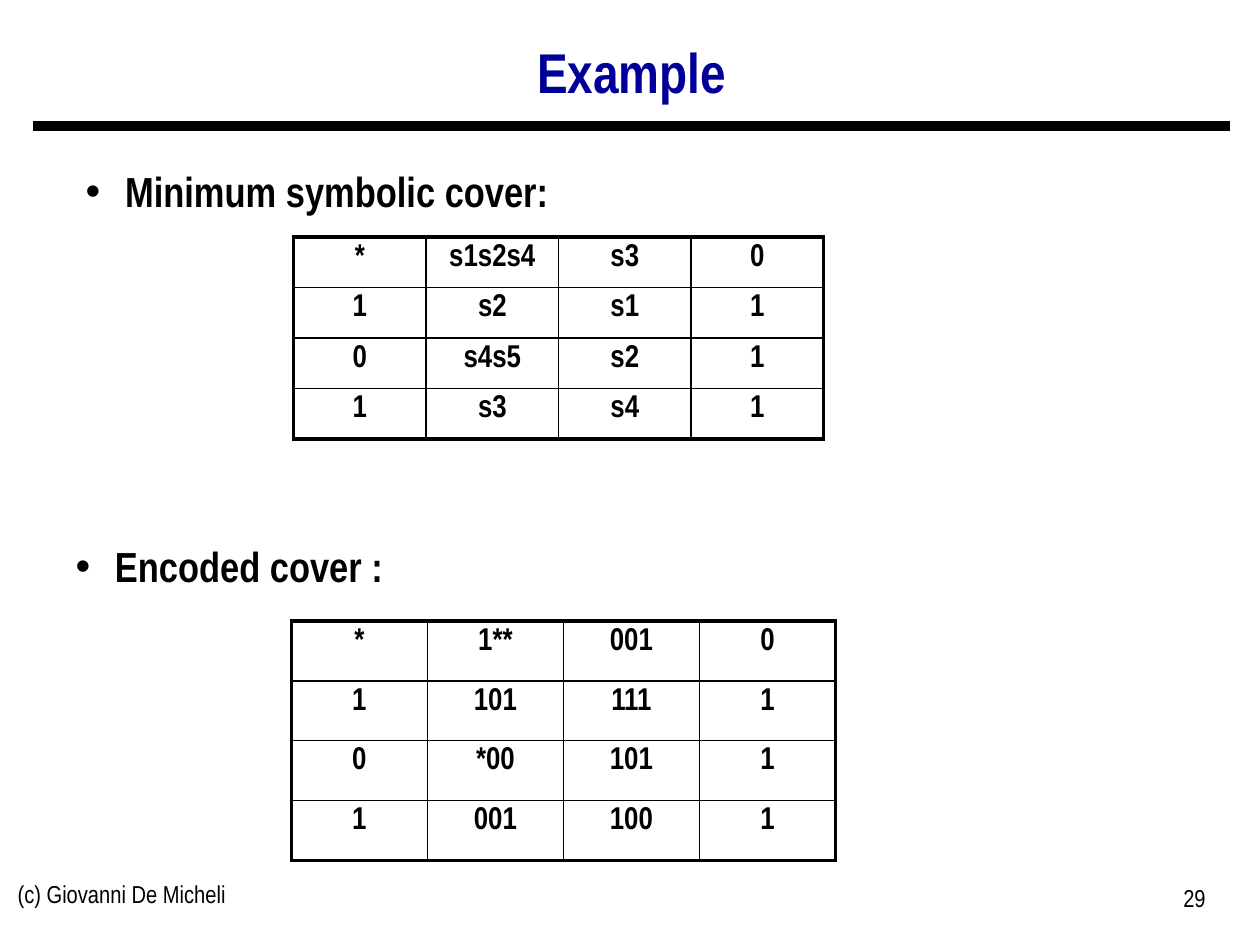
from lxml import etree
from pptx import Presentation
from pptx.dml.color import RGBColor
from pptx.enum.shapes import MSO_CONNECTOR
from pptx.enum.text import MSO_ANCHOR, MSO_AUTO_SIZE, PP_ALIGN
from pptx.oxml.ns import qn
from pptx.util import Pt

FONT = "Arial Narrow"
COLORS = {"text": "000000", "title": "000099", "line": "000000"}
LEFT, CENTER, RIGHT = PP_ALIGN.LEFT, PP_ALIGN.CENTER, PP_ALIGN.RIGHT
TOP, MIDDLE = MSO_ANCHOR.TOP, MSO_ANCHOR.MIDDLE
NO_AUTO_SIZE = MSO_AUTO_SIZE.NONE
STRAIGHT = MSO_CONNECTOR.STRAIGHT
OUTER_BORDER, INNER_BORDER = 2.25, 1

SYMBOLIC_COVER = [
    ["*", "s1s2s4", "s3", "0"],
    ["1", "s2", "s1", "1"],
    ["0", "s4s5", "s2", "1"],
    ["1", "s3", "s4", "1"],
]
ENCODED_COVER = [
    ["*", "1**", "001", "0"],
    ["1", "101", "111", "1"],
    ["0", "*00", "101", "1"],
    ["1", "001", "100", "1"],
]


def write(text_frame, text, size, alignment=LEFT, bold=False, color="text"):
    paragraph = text_frame.paragraphs[0]
    paragraph.alignment = alignment
    run = paragraph.add_run()
    run.text = text
    run.font.name = FONT
    run.font.size = Pt(size)
    run.font.bold = bold
    run.font.color.rgb = RGBColor.from_string(COLORS[color])
    return paragraph


def place(shape, left, top, width, height):
    shape.left, shape.top = Pt(left), Pt(top)
    shape.width, shape.height = Pt(width), Pt(height)


def add_header(slide, left, top, width, height):
    """Fill the title and draw the rule just below it."""
    title = slide.shapes.title
    place(title, left, top, width, height)
    title.text_frame.auto_size = NO_AUTO_SIZE
    title.text_frame.vertical_anchor = MIDDLE
    paragraph = write(title.text_frame, "Example", 32, CENTER, True, "title")
    paragraph.line_spacing = 0.9

    rule_y = Pt(top + height + 2)
    rule = slide.shapes.add_connector(
        STRAIGHT, Pt(left), rule_y, Pt(left + width), rule_y)
    rule.line.color.rgb = RGBColor.from_string(COLORS["line"])
    rule.line.width = Pt(6)
    etree.SubElement(rule._element.spPr, qn("a:effectLst"))


def fill_caption(placeholder, text, left, top, width, height, alignment):
    place(placeholder, left, top, width, height)
    text_frame = placeholder.text_frame
    text_frame.auto_size = NO_AUTO_SIZE
    text_frame.vertical_anchor = TOP
    paragraph = write(text_frame, text, 24, alignment, True)
    paragraph.space_before = Pt(0)
    properties = paragraph._p.get_or_add_pPr()
    properties.set("marL", str(Pt(22.5)))
    properties.set("indent", str(-Pt(22.5)))
    etree.SubElement(properties, qn("a:buFont"), typeface="Arial")
    etree.SubElement(properties, qn("a:buChar"), char="•")


def set_border(cell, side, width):
    properties = cell._tc.get_or_add_tcPr()
    line = etree.SubElement(properties, qn(f"a:ln{side}"), w=str(Pt(width)))
    fill = etree.SubElement(line, qn("a:solidFill"))
    etree.SubElement(fill, qn("a:srgbClr"), val=COLORS["line"])


def add_cover_table(slide, rows, left, top, width, height):
    """Add an evenly divided grid with a heavier outer border."""
    row_count, column_count = len(rows), len(rows[0])
    table = slide.shapes.add_table(
        row_count, column_count, Pt(left), Pt(top), Pt(width), Pt(height)).table
    table.first_row = table.horz_banding = False
    for column in table.columns:
        column.width = Pt(width / column_count)
    for row in table.rows:
        row.height = Pt(height / row_count)
    for i, values in enumerate(rows):
        for j, value in enumerate(values):
            cell = table.cell(i, j)
            cell.vertical_anchor = TOP
            write(cell.text_frame, value, 18, CENTER, True)
            outer_sides = {"L": j == 0, "R": j == column_count - 1,
                           "T": i == 0, "B": i == row_count - 1}
            for side, is_outer in outer_sides.items():
                set_border(cell, side, OUTER_BORDER if is_outer else INNER_BORDER)
            cell.fill.background()


def add_footer_text(slide, text, left, top, width, height, alignment):
    box = slide.shapes.add_textbox(Pt(left), Pt(top), Pt(width), Pt(height))
    box.text_frame.word_wrap = True
    write(box.text_frame, text, 14, alignment)


def main():
    presentation = Presentation()
    presentation.slide_width, presentation.slide_height = Pt(720), Pt(540)
    two_content_layout = presentation.slide_layouts[3]
    slide = presentation.slides.add_slide(two_content_layout)
    symbolic_caption, encoded_caption = list(slide.placeholders)[1:3]

    add_header(slide, 19, 16, 684, 54)
    fill_caption(symbolic_caption, "Minimum symbolic cover:",
                 28.8, 91, 304.6, 36, CENTER)
    add_cover_table(slide, SYMBOLIC_COVER, 167.8, 135.4, 302.8, 115.6)
    fill_caption(encoded_caption, "Encoded cover :",
                 36, 305.3, 476.6, 36, LEFT)
    add_cover_table(slide, ENCODED_COVER, 166.5, 354.9, 311, 136.8)
    add_footer_text(slide, "(c) Giovanni De Micheli", 3, 499, 228, 37, LEFT)
    add_footer_text(slide, "29", 528, 501, 168, 37, RIGHT)
    presentation.save("out.pptx")


if __name__ == "__main__":
    main()
